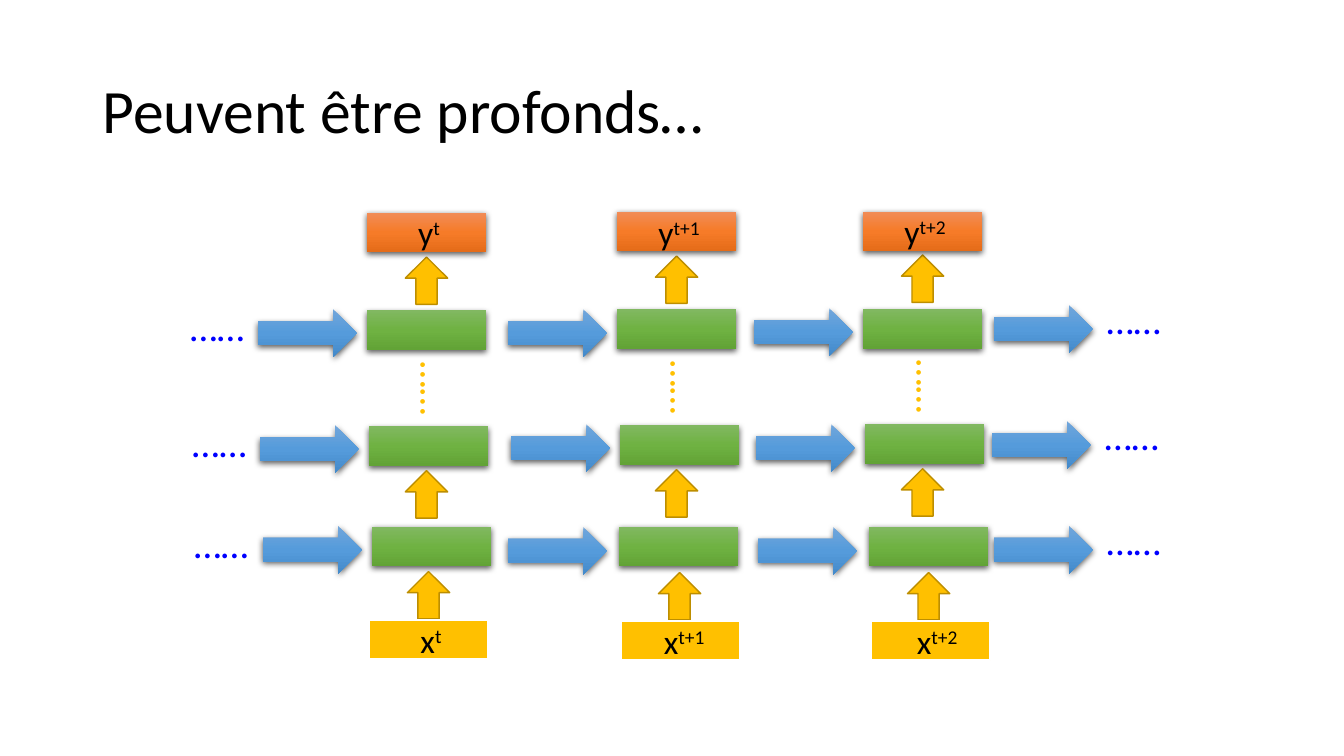
from lxml import etree
from pptx import Presentation
from pptx.dml.color import RGBColor
from pptx.enum.shapes import MSO_SHAPE
from pptx.enum.text import MSO_ANCHOR, MSO_AUTO_SIZE, PP_ALIGN
from pptx.oxml.ns import qn
from pptx.util import Emu, Pt

RECT, UP, RIGHT = MSO_SHAPE.RECTANGLE, MSO_SHAPE.UP_ARROW, MSO_SHAPE.RIGHT_ARROW
CENTER, LEFT = PP_ALIGN.CENTER, PP_ALIGN.LEFT
MIDDLE, TOP = MSO_ANCHOR.MIDDLE, MSO_ANCHOR.TOP
GROW, FIXED = MSO_AUTO_SIZE.SHAPE_TO_FIT_TEXT, MSO_AUTO_SIZE.NONE

# Content: positions are (left, top) in px, 100 px to the inch
TITLE = "Peuvent être profonds…"
DOTS = "……"
STEPS = ["t", "t+1", "t+2"]

LAYERS = [
    {"cells": [(364, 308), (612, 307), (856, 307)],
     "flow": [(256, 307), (504, 307), (748, 306), (986, 303)],
     "dots": [(167, 295), (1076, 288)]},
    {"cells": [(366, 423), (615, 422), (858, 421)],
     "flow": [(258, 422), (507, 421), (750, 421), (984, 418)],
     "dots": [(169, 410), (1074, 403)]},
    {"cells": [(369, 523), (614, 523), (862, 523)],
     "flow": [(261, 522), (504, 523), (752, 523), (986, 522)],
     "dots": [(171, 510), (1076, 507)]},
]
UP_ARROWS = [
    (402, 255), (650, 254), (894, 253),
    (402, 467), (650, 466), (894, 465),
    (404, 567), (653, 568), (900, 568),
]
DEPTH_DOTS = [(384, 357), (632, 356), (876, 355)]
OUTPUTS = [(364, 211), (612, 210), (856, 210)]
OUTPUT_LABELS = [(376, 205), (624, 205), (868, 204)]
INPUTS = [(366, 615), (616, 616), (864, 616)]
INPUT_LABELS = [(378, 610), (629, 611), (880, 611)]

BOX, FLOW, RISE = (118, 39), (98, 47), (42, 47)
DOTS_SIZE, LABEL_SIZE = (97, 57), (99, 50)

GREEN = ["81B861", "6FB242", "62A336"]
BLUE = ["71A6DB", "559BDB", "448ACA"]
ORANGE = ["F18C57", "F67B28", "E56C19"]
GOLD, GOLD_EDGE, WHITE = "FFC000", "BD8E00", "FFFFFF"
BLACK, DOT_BLUE = "000000", "0000FF"


def px(length):
    return Emu(length * 9144)


def color(code):
    return RGBColor.from_string(code)


def place(at, size):
    return [px(length) for length in (*at, *size)]


prs = Presentation()
prs.slide_width, prs.slide_height = px(1333), px(750)
slide = prs.slides.add_slide(prs.slide_layouts[6])


def add_flat(preset, at, size, edge, width):
    shape = slide.shapes.add_shape(preset, *place(at, size))
    shape.shadow.inherit = False
    shape.fill.solid()
    shape.fill.fore_color.rgb = color(GOLD)
    shape.line.color.rgb = color(edge)
    shape.line.width = Pt(width)


def add_glossy(preset, at, size, shades):
    shape = slide.shapes.add_shape(preset, *place(at, size))
    shape.line.fill.background()
    shape.fill.gradient()
    shape.fill.gradient_angle = 270
    shape.shadow.inherit = False
    properties = shape.element.spPr

    # Three evenly spaced gradient stops
    stops = properties.find(".//" + qn("a:gsLst"))
    for stop in list(stops):
        stops.remove(stop)
    for index, shade in enumerate(shades):
        stop = etree.SubElement(stops, qn("a:gs"), pos=str(index * 50000))
        etree.SubElement(stop, qn("a:srgbClr"), val=shade)

    # Soft shadow straight below
    shadow = etree.SubElement(
        properties.find(qn("a:effectLst")), qn("a:outerShdw"),
        blurRad=str(Pt(4.5)), dist=str(Pt(1.5)), dir="5400000",
        algn="ctr", rotWithShape="0")
    tint = etree.SubElement(shadow, qn("a:srgbClr"), val=BLACK)
    etree.SubElement(tint, qn("a:alpha"), val="63000")


def add_text(text, at, size, points, ink, superscript="", rotation=0,
             align=CENTER, anchor=TOP, fit=GROW, spacing=1.0):
    box = slide.shapes.add_textbox(*place(at, size))
    box.rotation = rotation
    frame = box.text_frame
    frame.word_wrap = True
    frame.auto_size = fit
    frame.vertical_anchor = anchor
    paragraph = frame.paragraphs[0]
    paragraph.alignment = align
    paragraph.line_spacing = spacing
    paragraph.font.name = "Calibri"
    paragraph.font.size = Pt(points)
    paragraph.font.color.rgb = color(ink)
    paragraph.add_run().text = text
    if superscript:
        raised = paragraph.add_run()
        raised.text = superscript
        raised.font.bold = False
        raised._r.get_or_add_rPr().set("baseline", "30000")


# Title
add_text(TITLE, (92, 40), (1150, 145), 44, BLACK,
         align=LEFT, anchor=MIDDLE, fit=FIXED, spacing=0.9)

# Recurrent layers
for layer in LAYERS:
    for at in layer["cells"]:
        add_glossy(RECT, at, BOX, GREEN)
    for at in layer["flow"]:
        add_glossy(RIGHT, at, FLOW, BLUE)
    for at in layer["dots"]:
        add_text(DOTS, at, DOTS_SIZE, 28, DOT_BLUE)

# Links between layers
for at in UP_ARROWS:
    add_flat(UP, at, RISE, GOLD_EDGE, 1)
for at in DEPTH_DOTS:
    add_text(DOTS, at, DOTS_SIZE, 28, GOLD, rotation=90)

# Inputs and outputs
for at in INPUTS:
    add_flat(RECT, at, BOX, WHITE, 1.5)
for at in OUTPUTS:
    add_glossy(RECT, at, BOX, ORANGE)
for variable, labels in (("x", INPUT_LABELS), ("y", OUTPUT_LABELS)):
    for step, at in zip(STEPS, labels):
        add_text(variable, at, LABEL_SIZE, 24, BLACK, superscript=step)

prs.save("out.pptx")
